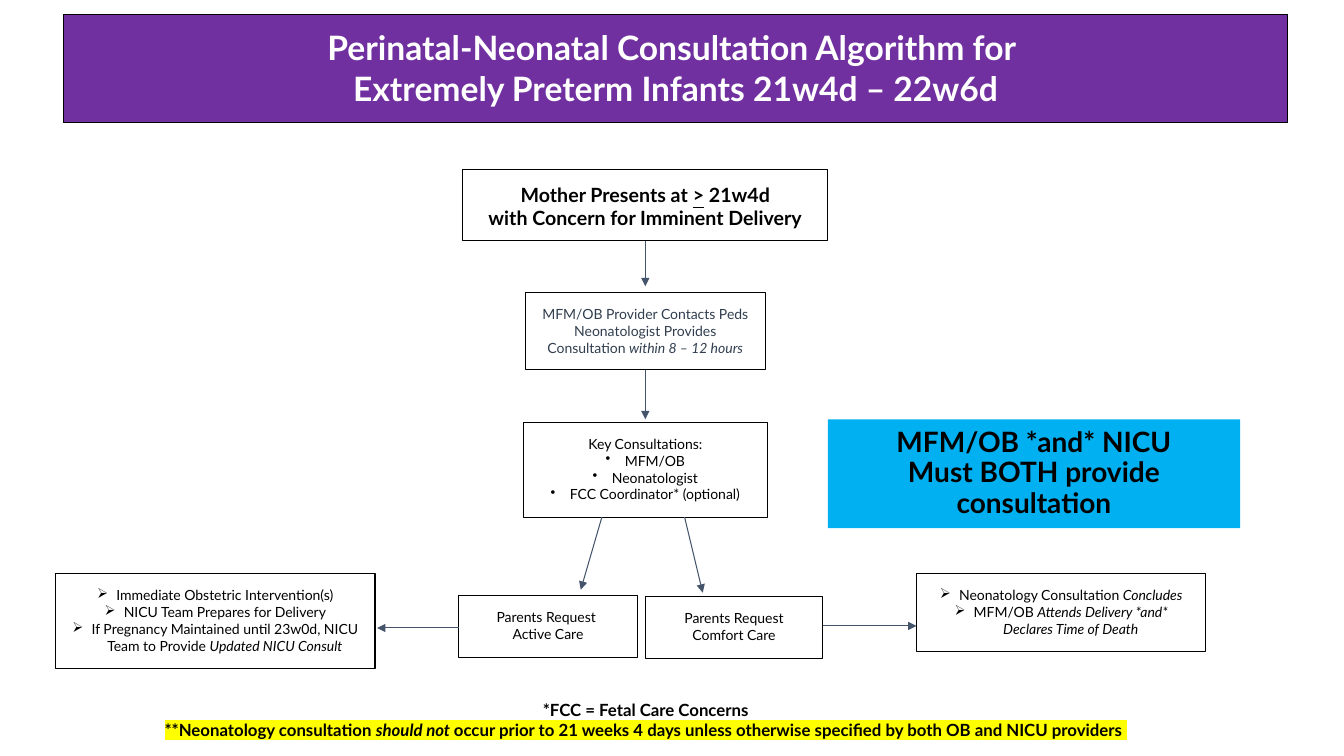
from lxml.etree import SubElement
from pptx import Presentation
from pptx.dml.color import RGBColor
from pptx.enum.shapes import MSO_CONNECTOR, MSO_SHAPE
from pptx.enum.text import MSO_ANCHOR, PP_ALIGN
from pptx.oxml.ns import qn
from pptx.util import Pt

PX = 9144  # 100 px to the inch
FONT = "Lato"
BLACK = RGBColor(0x00, 0x00, 0x00)
WHITE = RGBColor(0xFF, 0xFF, 0xFF)
PURPLE = RGBColor(0x70, 0x30, 0xA0)
CYAN = RGBColor(0x00, 0xB0, 0xF0)
SLATE = RGBColor(0x31, 0x3E, 0x4F)
ARROW = RGBColor(0x44, 0x54, 0x6A)
HIGHLIGHT = "FFFF00"


def px(*lengths):
    return [length * PX for length in lengths]


def set_insets(frame, inset):
    frame.margin_left = frame.margin_right = inset * PX
    frame.margin_top = frame.margin_bottom = inset * PX


def format_paragraph(paragraph, size, color, bold=False):
    paragraph.alignment = PP_ALIGN.CENTER
    font = paragraph.font
    font.name, font.size, font.bold = FONT, Pt(size), bold
    font.color.rgb = color


def add_bullet(paragraph, mark):
    properties = paragraph._p.get_or_add_pPr()
    properties.set("marL", str(19 * PX))
    properties.set("indent", str(-19 * PX))
    SubElement(properties, qn("a:buChar"), char=mark)


def add_runs(paragraph, line):
    """Write a line given as text or as (text, styles) pieces: i, u, h = highlight."""
    pieces = [(line, "")] if isinstance(line, str) else line
    for text, styles in pieces:
        run = paragraph.add_run()
        run.text = text
        if "i" in styles:
            run.font.italic = True
        if "u" in styles:
            run.font.underline = True
        if "h" in styles:
            highlight = SubElement(run._r.get_or_add_rPr(), qn("a:highlight"))
            SubElement(highlight, qn("a:srgbClr"), val=HIGHLIGHT)


def write_lines(frame, lines, size, color, bold=False, mark=None, plain_lines=0):
    """Fill a frame; lines after the first plain_lines get the bullet mark."""
    frame.word_wrap = True
    for index, line in enumerate(lines):
        paragraph = frame.paragraphs[0] if index == 0 else frame.add_paragraph()
        if mark and index >= plain_lines:
            add_bullet(paragraph, mark)
        format_paragraph(paragraph, size, color, bold)
        add_runs(paragraph, line)


def add_box(slide, place, lines, size=10, color=BLACK, fill=WHITE, **text_options):
    box = slide.shapes.add_shape(MSO_SHAPE.RECTANGLE, *px(*place))
    box.shadow.inherit = False
    box.fill.solid()
    box.fill.fore_color.rgb = fill
    box.line.color.rgb = BLACK
    box.line.width = Pt(0.75)
    set_insets(box.text_frame, 13)
    box.text_frame.vertical_anchor = MSO_ANCHOR.TOP
    write_lines(box.text_frame, lines, size, color, **text_options)


def add_arrow(slide, *ends):
    arrow = slide.shapes.add_connector(MSO_CONNECTOR.STRAIGHT, *px(*ends))
    arrow.line.color.rgb = ARROW
    arrow.line.width = Pt(0.75)
    SubElement(arrow.line._get_or_add_ln(), qn("a:tailEnd"), type="triangle")
    SubElement(arrow._element.spPr, qn("a:effectLst"))


def place_title(slide):
    title = slide.shapes.title
    title.left, title.top, title.width, title.height = px(821, 416, 409, 108)
    title.fill.solid()
    title.fill.fore_color.rgb = CYAN
    frame = title.text_frame
    set_insets(frame, 10)
    frame.word_wrap = True
    frame.vertical_anchor = MSO_ANCHOR.MIDDLE
    paragraph = frame.paragraphs[0]
    paragraph.line_spacing = 0.9
    format_paragraph(paragraph, 20, BLACK, bold=True)
    add_runs(paragraph, "MFM/OB *and* NICU")
    paragraph.add_line_break()
    add_runs(paragraph, "Must BOTH provide consultation")


def add_footnotes(slide):
    footnotes = slide.shapes.add_textbox(*px(112, 689, 1057, 50))
    write_lines(footnotes.text_frame, [
        "*FCC = Fetal Care Concerns",
        [("**Neonatology consultation ", "h"), ("should not ", "hi"),
         ("occur prior to 21 weeks 4 days unless otherwise specified "
          "by both OB and NICU providers ", "h")],
    ], 12, BLACK, bold=True)


def main():
    presentation = Presentation()
    presentation.slide_width, presentation.slide_height = px(1333, 750)
    slide = presentation.slides.add_slide(presentation.slide_layouts[5])
    place_title(slide)

    add_box(slide, (63, 14, 1214, 108),
            ["Perinatal-Neonatal Consultation Algorithm for ",
             "Extremely Preterm Infants 21w4d – 22w6d"],
            size=24, color=WHITE, fill=PURPLE, bold=True)
    add_box(slide, (459, 168, 362, 71),
            [[("Mother Presents at ", ""), (">", "u"), (" 21w4d", "")],
             "with Concern for Imminent Delivery"], size=14, bold=True)
    add_box(slide, (521, 290, 238, 77),
            [[("MFM/OB Provider Contacts Peds Neonatologist Provides "
               "Consultation ", ""), ("within 8 – 12 hours", "i")]], color=SLATE)
    add_box(slide, (519, 419, 242, 94),
            ["Key Consultations:", "MFM/OB", "Neonatologist",
             "FCC Coordinator* (optional)"], mark="•", plain_lines=1)
    add_box(slide, (455, 591, 177, 61), ["Parents Request ", "Active Care"])
    add_box(slide, (640, 592, 176, 61), ["Parents Request Comfort Care"])
    add_box(slide, (55, 569, 317, 94),
            ["Immediate Obstetric Intervention(s)",
             "NICU Team Prepares for Delivery",
             [("If Pregnancy Maintained until 23w0d, NICU Team to Provide ", ""),
              ("Updated NICU Consult", "i")]], mark="➢")
    add_box(slide, (909, 569, 287, 77),
            [[("Neonatology Consultation ", ""), ("Concludes", "i")],
             [("MFM/OB ", ""),
              ("Attends Delivery *and* Declares Time of Death", "i")]], mark="➢")

    for ends in [
        (640, 239, 640, 284),
        (640, 367, 640, 416),
        (597, 513, 576, 585),
        (679, 513, 697, 588),
        (455, 623, 374, 623),
        (816, 621, 909, 621),
    ]:
        add_arrow(slide, *ends)
    add_footnotes(slide)
    presentation.save("out.pptx")


if __name__ == "__main__":
    main()
